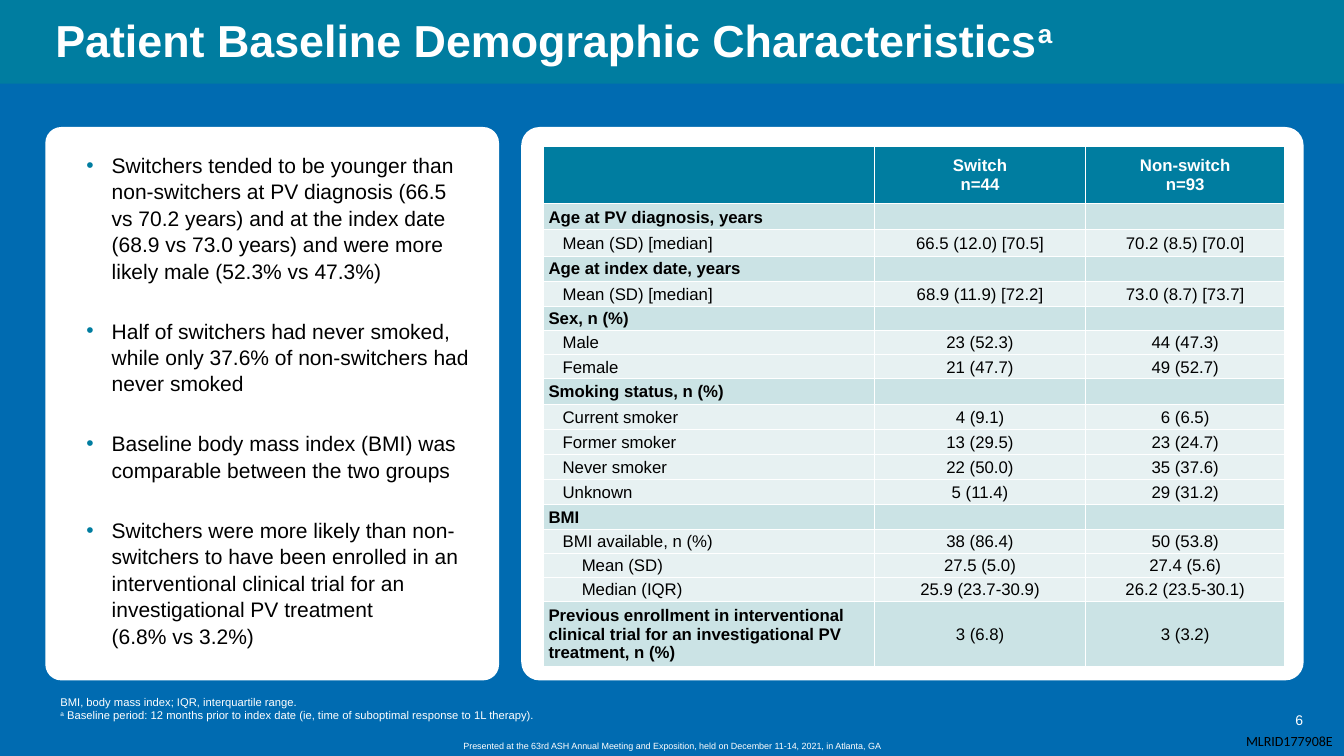
from pptx import Presentation
from pptx.dml.color import RGBColor
from pptx.enum.shapes import MSO_SHAPE
from pptx.enum.text import MSO_ANCHOR, MSO_AUTO_SIZE, PP_ALIGN
from pptx.oxml import parse_xml
from pptx.oxml.ns import nsdecls
from pptx.util import Inches, Pt

COLORS = {"blue": "006BB1", "teal": "007DA0", "white": "FFFFFF", "black": "000000",
          "group": "CBE3E5", "detail": "E7F1F2"}
SUPERSCRIPT = "30000"


def color(name):
    return RGBColor.from_string(COLORS[name])


class SlideBuilder:
    def __init__(self, slide, font="Arial"):
        self.slide = slide
        self.font = font

    def background(self, name):
        fill = self.slide.background.fill
        fill.solid()
        fill.fore_color.rgb = color(name)

    def panel(self, box, fill, radius=None):
        kind = MSO_SHAPE.ROUNDED_RECTANGLE if radius else MSO_SHAPE.RECTANGLE
        shape = self.slide.shapes.add_shape(kind, *map(Inches, box))
        if radius:
            shape.adjustments[0] = radius
        shape.shadow.inherit = False
        shape.fill.solid()
        shape.fill.fore_color.rgb = color(fill)
        shape.line.fill.background()

    def add_pieces(self, paragraph, pieces, size, ink, bold=False, font=None):
        """Add (text, baseline) pieces to a paragraph; a line feed breaks the line."""
        for text, baseline in pieces:
            for number, line in enumerate(text.split("\n")):
                if number:
                    paragraph.add_line_break()
                run = paragraph.add_run()
                run.text = line
                values = {"name": font or self.font, "size": Pt(size), "bold": bold}
                for key, value in values.items():
                    setattr(run.font, key, value)
                run.font.color.rgb = color(ink)
                if baseline:
                    run.font._element.set("baseline", baseline)

    def text(self, box, paragraphs, size, ink="white", frame=None, layout=None,
             bullet=None, **style):
        shape = self.slide.shapes.add_textbox(*map(Inches, box))
        text_frame = shape.text_frame
        for key, value in {"word_wrap": True, **(frame or {})}.items():
            setattr(text_frame, key, value)
        for number, pieces in enumerate(paragraphs):
            paragraph = text_frame.add_paragraph() if number else text_frame.paragraphs[0]
            for key, value in (layout or {}).items():
                if number or key != "space_before":
                    setattr(paragraph, key, value)
            if bullet:
                self.bullet(paragraph, bullet)
            self.add_pieces(paragraph, pieces, size, ink, **style)

    def bullet(self, paragraph, name):
        properties = paragraph._p.get_or_add_pPr()
        properties.set("marL", str(Inches(0.25)))
        properties.set("indent", str(-Inches(0.25)))
        for xml in (f'<a:buClr {nsdecls("a")}><a:srgbClr val="{COLORS[name]}"/></a:buClr>',
                    f'<a:buFont {nsdecls("a")} typeface="{self.font}"/>',
                    f'<a:buChar {nsdecls("a")} char="•"/>'):
            properties.append(parse_xml(xml))

    def table(self, box, widths, heights):
        frame = self.slide.shapes.add_table(len(heights), len(widths), *map(Inches, box))
        table = frame.table
        for column, width in zip(table.columns, widths):
            column.width = Inches(width)
        for row, height in zip(table.rows, heights):
            row.height = Inches(height)
        return table

    def cell(self, cell, text, fill, ink="black", bold=False, indent=0.01, centered=True):
        values = {"margin_left": Inches(indent), "margin_right": Inches(0.01),
                  "margin_top": Inches(0.01), "margin_bottom": 0,
                  "vertical_anchor": MSO_ANCHOR.MIDDLE}
        for key, value in values.items():
            setattr(cell, key, value)
        cell.fill.solid()
        cell.fill.fore_color.rgb = color(fill)
        self.borders(cell)
        for number, line in enumerate(text.split("\n")):
            text_frame = cell.text_frame
            paragraph = text_frame.add_paragraph() if number else text_frame.paragraphs[0]
            paragraph.alignment = PP_ALIGN.CENTER if centered else PP_ALIGN.LEFT
            if line:
                self.add_pieces(paragraph, [(line, None)], 12, ink, bold)
            else:
                paragraph._p.append(parse_xml(f'<a:endParaRPr {nsdecls("a")} sz="1200"/>'))

    def borders(self, cell):
        properties = cell._tc.get_or_add_tcPr()
        for position, side in enumerate("LRTB"):
            properties.insert(position, parse_xml(
                f'<a:ln{side} {nsdecls("a")} w="{Pt(0.75)}"><a:solidFill>'
                f'<a:srgbClr val="{COLORS["white"]}"/></a:solidFill></a:ln{side}>'))


FINDINGS = [
    "Switchers tended to be younger than non-switchers at PV diagnosis (66.5 vs 70.2 years) "
    "and at the index date (68.9 vs 73.0 years) and were more likely male (52.3% vs 47.3%)",
    "Half of switchers had never smoked, while only 37.6% of non-switchers had never smoked",
    "Baseline body mass index (BMI) was comparable between the two groups",
    "Switchers were more likely than non-switchers to have been enrolled in an interventional "
    "clinical trial for an investigational PV treatment \n(6.8% vs 3.2%)",
]

# Level, label, switch, non-switch, row height
DEMOGRAPHICS = [
    (0, "Age at PV diagnosis, years", "", "", 0.26),
    (1, "Mean (SD) [median]", "66.5 (12.0) [70.5]", "70.2 (8.5) [70.0]", 0.26),
    (0, "Age at index date, years", "", "", 0.25),
    (1, "Mean (SD) [median]", "68.9 (11.9) [72.2]", "73.0 (8.7) [73.7]", 0.25),
    (0, "Sex, n (%)", "", "", 0.24),
    (1, "Male", "23 (52.3)", "44 (47.3)", 0.24),
    (1, "Female", "21 (47.7)", "49 (52.7)", 0.24),
    (0, "Smoking status, n (%)", "", "", 0.25),
    (1, "Current smoker", "4 (9.1)", "6 (6.5)", 0.25),
    (1, "Former smoker", "13 (29.5)", "23 (24.7)", 0.25),
    (1, "Never smoker", "22 (50.0)", "35 (37.6)", 0.25),
    (1, "Unknown", "5 (11.4)", "29 (31.2)", 0.25),
    (0, "BMI", "", "", 0.24),
    (1, "BMI available, n (%)", "38 (86.4)", "50 (53.8)", 0.24),
    (2, "Mean (SD)", "27.5 (5.0)", "27.4 (5.6)", 0.24),
    (2, "Median (IQR)", "25.9 (23.7-30.9)", "26.2 (23.5-30.1)", 0.24),
    (0, "Previous enrollment in interventional clinical trial for an investigational PV "
        "treatment, n (%)", "3 (6.8)", "3 (3.2)", 0.64),
]
INDENTS = [0.05, 0.19, 0.38]


def main():
    presentation = Presentation()
    presentation.slide_width, presentation.slide_height = Inches(13.33), Inches(7.5)
    builder = SlideBuilder(presentation.slides.add_slide(presentation.slide_layouts[6]))
    middle = {"vertical_anchor": MSO_ANCHOR.MIDDLE}
    centered = {"alignment": PP_ALIGN.CENTER}

    # Background, panels and title band
    builder.background("blue")
    builder.panel((0.45, 1.26, 4.5, 5.49), "white", 0.035)
    builder.panel((5.17, 1.26, 7.76, 5.49), "white", 0.033)
    builder.panel((0, -0.03, 13.33, 0.86), "teal")
    builder.text((0.45, 0.03, 11.91, 0.79),
                 [[("Patient Baseline Demographic Characteristics", None), ("a", SUPERSCRIPT)]],
                 32, frame=middle, layout={"line_spacing": 0.9}, bold=True)

    # Findings
    builder.text((0.76, 1.45, 4.03, 5.13), [[(finding, None)] for finding in FINDINGS], 15,
                 "black", bullet="teal",
                 layout={"line_spacing": 1.05, "space_before": Pt(12), "space_after": Pt(12)})

    # Demographics table
    heights = [0.57] + [row[-1] for row in DEMOGRAPHICS]
    table = builder.table((5.39, 1.45, 7.35, 5.13), [3.28, 2.1, 1.97], heights)
    for column, heading in enumerate(["", "Switch\nn=44", "Non-switch\nn=93"]):
        builder.cell(table.cell(0, column), heading, "teal", "white", bold=True)
    for number, (level, label, *values, _) in enumerate(DEMOGRAPHICS, start=1):
        fill = "detail" if level else "group"
        builder.cell(table.cell(number, 0), label, fill, bold=level == 0,
                     indent=INDENTS[level], centered=False)
        for column, value in enumerate(values, start=1):
            builder.cell(table.cell(number, column), value, fill)

    # Footnotes, conference line, slide number and document code
    builder.text((0.5, 6.87, 11.5, 0.34),
                 [[("BMI, body mass index; IQR, interquartile range.", None)],
                  [("a", SUPERSCRIPT), (" Baseline period: 12 months prior to index date "
                                        "(ie, time of suboptimal response to 1L therapy).", None)]],
                 8, frame={"vertical_anchor": MSO_ANCHOR.BOTTOM})
    builder.text((3.78, 7.28, 5.77, 0.22),
                 [[("Presented at the 63rd ASH Annual Meeting and Exposition, "
                    "held on December 11-14, 2021, in Atlanta, GA", SUPERSCRIPT)]],
                 11, frame={"auto_size": MSO_AUTO_SIZE.SHAPE_TO_FIT_TEXT}, layout=centered)
    builder.text((12.62, 6.94, 0.53, 0.41), [[("6", None)]], 10, frame=middle, layout=centered)
    builder.text((12.26, 7.22, 1.08, 0.27), [[("MLRID177908E", None)]], 10, "black",
                 frame={"word_wrap": False, "auto_size": MSO_AUTO_SIZE.SHAPE_TO_FIT_TEXT},
                 font="Calibri")
    presentation.save("out.pptx")


if __name__ == "__main__":
    main()
